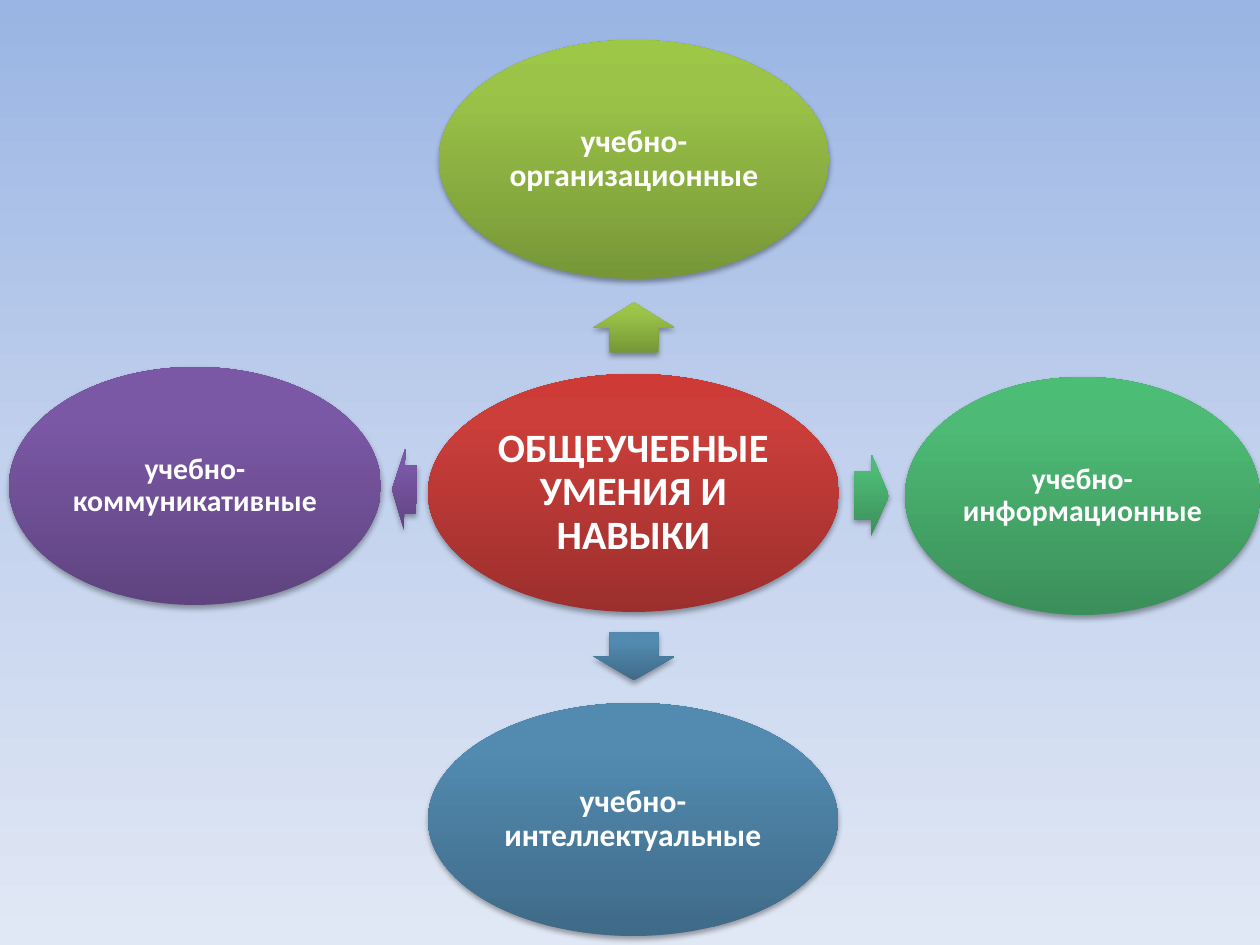
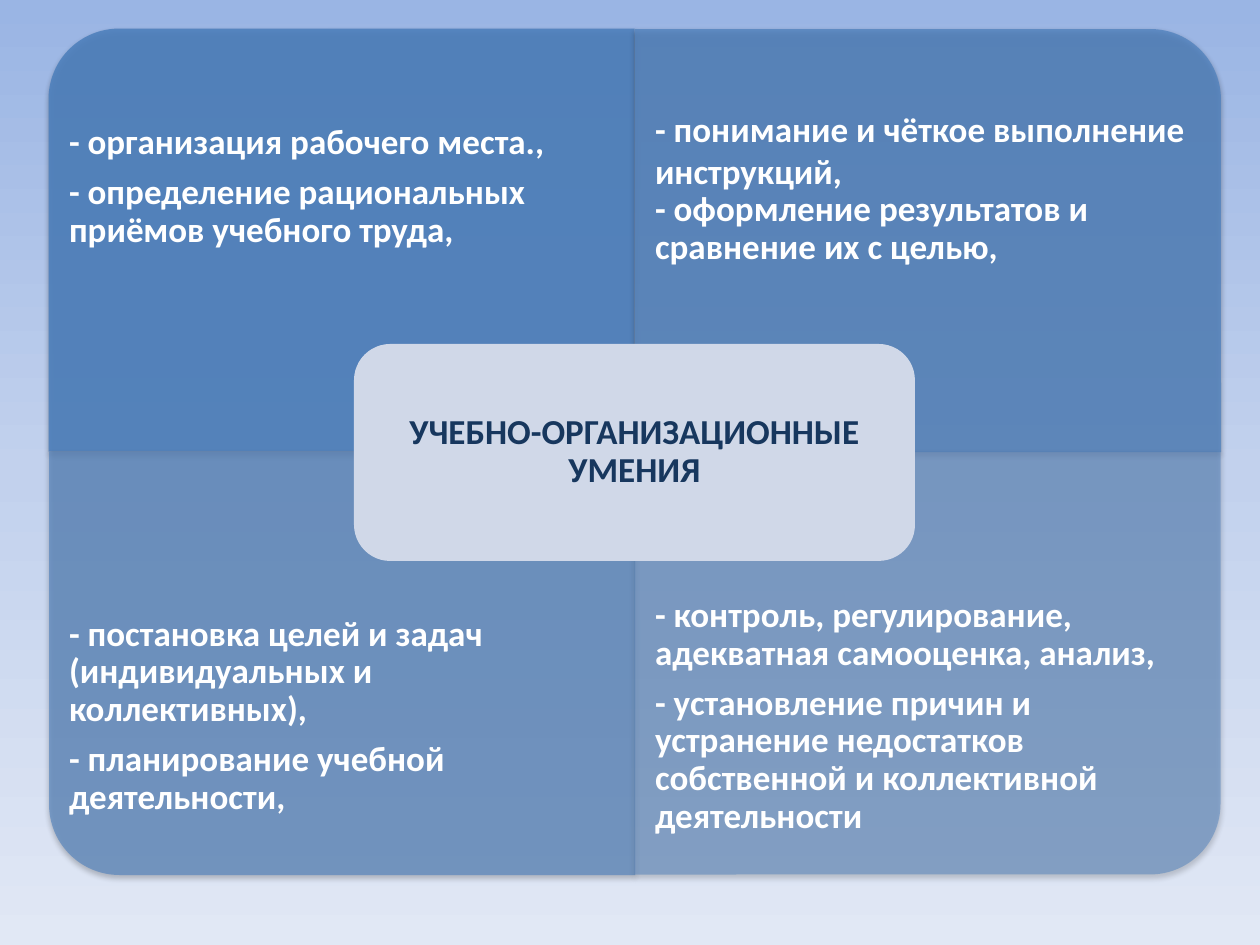
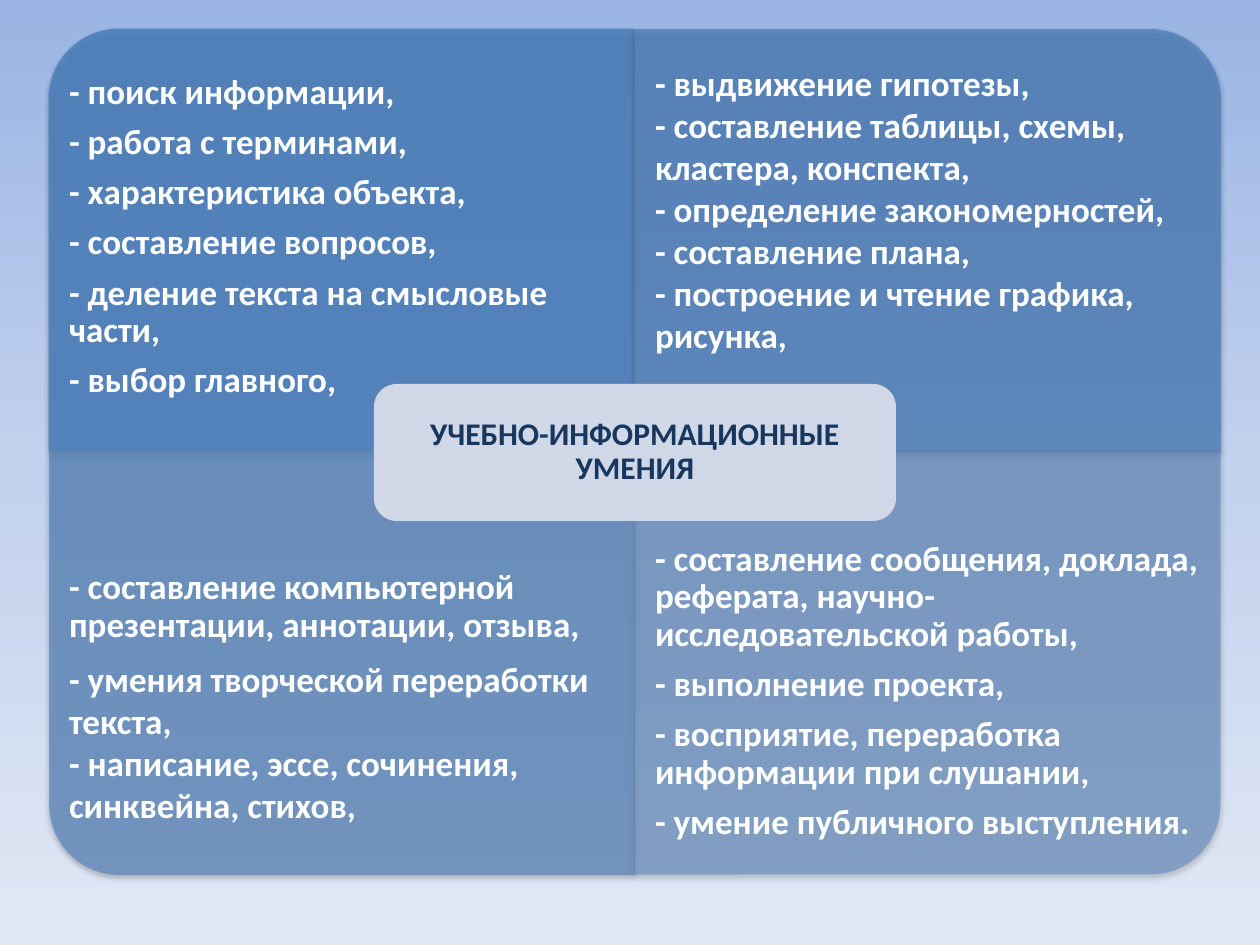
import dataclasses

import lxml.etree
import pptx
import pptx.dml.color
import pptx.enum.shapes
import pptx.enum.text
import pptx.oxml.ns
import pptx.util

PIXEL = 914400 / 126
FONT = "Calibri"
WHITE = "FFFFFF"
NAVY = "17375E"
PANEL_BLUE = "4F81BD"
CARD_BLUE = "D0D8E8"
SKY = ((0, "9AB5E4"), (50, "C2D1ED"), (100, "E1E8F5"))
RED = ((0, "9C2F2D"), (80, "CB3E3A"), (100, "CE3B37"))
LIME = ((0, "779737"), (80, "9BC348"), (100, "9DC746"))
GREEN = ((0, "3B8F5A"), (80, "4DBA75"), (100, "4BBD75"))
STEEL = ((0, "3F6A88"), (80, "528AB0"), (100, "518BB3"))
PURPLE = ((0, "5F4480"), (80, "7B58A6"), (100, "7C57A8"))

GRID_LEFT, GRID_TOP, PANEL_WIDTH, PANEL_HEIGHT = 49, 29, 586, 423
PANEL_TEXT_HEIGHT = 317
PANEL_STYLES = ((270, 90), (0, 77), (180, 63), (90, 50))

SHAPES = pptx.enum.shapes.MSO_SHAPE
CENTER = pptx.enum.text.PP_ALIGN.CENTER
LEFT = pptx.enum.text.PP_ALIGN.LEFT


@dataclasses.dataclass
class Panel:
    """Text of one quarter, its loosely spaced paragraphs and its shift down."""
    paragraphs: list
    loose: tuple = ()
    shift: int = 0


def px(length):
    """Turn pixels into EMU."""
    return pptx.util.Emu(round(length * PIXEL))


def box_of(left, top, width, height):
    """Turn a pixel box into EMU lengths."""
    return [px(length) for length in (left, top, width, height)]


def color_of(value):
    """Make a colour from a hex string."""
    return pptx.dml.color.RGBColor.from_string(value)


def add_element(parent, tag, **attributes):
    """Append a drawing element with attributes to a parent."""
    element = lxml.etree.SubElement(parent, pptx.oxml.ns.qn(tag))
    for name, value in attributes.items():
        element.set(name, str(value))
    return element


def fill_gradient(owner_fill, owner_element, stops, angle):
    """Fill with a linear gradient that stays upright on rotated shapes."""
    owner_fill.gradient()
    owner_fill.gradient_angle = angle
    gradient = next(owner_element.iter(pptx.oxml.ns.qn("a:gradFill")))
    gradient.set("rotWithShape", "0")
    stop_list = gradient.find(pptx.oxml.ns.qn("a:gsLst"))
    for stop in list(stop_list):
        stop_list.remove(stop)
    for position, value in stops:
        stop = add_element(stop_list, "a:gs", pos=position * 1000)
        add_element(stop, "a:srgbClr", val=value)


def add_shadow(shape):
    """Give a shape the soft shadow below it."""
    effects = shape.element.spPr.find(pptx.oxml.ns.qn("a:effectLst"))
    shadow = add_element(effects, "a:outerShdw", blurRad=40000, dist=23000,
                         dir=5400000, rotWithShape=0)
    color = add_element(shadow, "a:srgbClr", val="000000")
    add_element(color, "a:alpha", val=35000)


def add_plain_shape(slide, kind, box, rotation=0):
    """Add a preset shape with no line and no shadow."""
    shape = slide.shapes.add_shape(kind, *box_of(*box))
    shape.rotation = rotation
    shape.shadow.inherit = False
    shape.line.fill.background()
    return shape


def write_text(shape, paragraphs, size, color=WHITE, align=CENTER, inset=4, loose=()):
    """Write bold paragraphs, tightly spaced except the loose ones."""
    frame = shape.text_frame
    frame.word_wrap = True
    frame.vertical_anchor = pptx.enum.text.MSO_ANCHOR.MIDDLE
    frame.margin_left = frame.margin_right = px(inset)
    frame.margin_top = frame.margin_bottom = px(inset)
    for index, text in enumerate(paragraphs):
        paragraph = frame.add_paragraph() if index else frame.paragraphs[0]
        paragraph.alignment = align
        if index not in loose:
            paragraph.line_spacing = 0.9
            paragraph.space_after = pptx.util.Pt(size * 0.35)
        run = paragraph.add_run()
        run.text = text
        run.font.name = FONT
        run.font.size = pptx.util.Pt(size)
        run.font.bold = True
        run.font.color.rgb = color_of(color)


def add_ellipse(slide, box, stops, text, size):
    """Add a shaded ellipse with a label."""
    ellipse = add_plain_shape(slide, SHAPES.OVAL, box)
    fill_gradient(ellipse.fill, ellipse.element, stops, 90)
    add_shadow(ellipse)
    write_text(ellipse, [text], size)


def add_arrow(slide, box, stops, rotation):
    """Add a shaded block arrow pointing along its rotation."""
    arrow = add_plain_shape(slide, SHAPES.RIGHT_ARROW, box, rotation)
    arrow.adjustments[0] = 0.6
    arrow.adjustments[1] = 0.5
    fill_gradient(arrow.fill, arrow.element, stops, 90)
    add_shadow(arrow)


def add_panel(slide, index, panel):
    """Add one quarter of the grid with its text at the outer edge."""
    row, column = divmod(index, 2)
    rotation, opacity = PANEL_STYLES[index]
    left = GRID_LEFT + column * PANEL_WIDTH
    top = GRID_TOP + row * PANEL_HEIGHT
    width, height = PANEL_WIDTH, PANEL_HEIGHT
    if rotation % 180:
        width, height = height, width
    box = (left + (PANEL_WIDTH - width) // 2, top + (PANEL_HEIGHT - height) // 2,
           width, height)
    shape = add_plain_shape(slide, SHAPES.ROUND_1_RECTANGLE, box, rotation)
    shape.fill.solid()
    shape.fill.fore_color.rgb = color_of(PANEL_BLUE)
    color = next(shape.element.spPr.iter(pptx.oxml.ns.qn("a:srgbClr")))
    add_element(color, "a:alpha", val=opacity * 1000)
    add_shadow(shape)

    text_top = top + row * (PANEL_HEIGHT - PANEL_TEXT_HEIGHT) + panel.shift
    text_box = slide.shapes.add_textbox(
        *box_of(left, text_top, PANEL_WIDTH, PANEL_TEXT_HEIGHT))
    write_text(text_box, panel.paragraphs, 20, align=LEFT, inset=20, loose=panel.loose)


def add_card(slide, box, text, size):
    """Add the pale title card over the middle of the grid."""
    card = add_plain_shape(slide, SHAPES.ROUNDED_RECTANGLE, box)
    card.fill.solid()
    card.fill.fore_color.rgb = color_of(CARD_BLUE)
    write_text(card, [text], size, color=NAVY, inset=10)


def add_slide(presentation):
    """Add a blank slide with the sky background."""
    slide = presentation.slides.add_slide(presentation.slide_layouts[6])
    fill_gradient(slide.background.fill, slide.element, SKY, 270)
    return slide


def add_skill_map(presentation):
    """Build the slide with four skill groups around the centre."""
    slide = add_slide(presentation)
    add_ellipse(slide, (428, 374, 411, 238), RED, "ОБЩЕУЧЕБНЫЕ УМЕНИЯ И НАВЫКИ", 23)
    branches = (
        ((609, 287, 50, 81), 270, (439, 40, 390, 239), LIME,
         "учебно-организационные", 18),
        ((854, 455, 35, 81), 0.4, (905, 377, 355, 238), GREEN,
         "учебно-информационные", 17),
        ((610, 616, 48, 81), 90.3, (428, 703, 410, 233), STEEL,
         "учебно-интеллектуальные", 18),
        ((392, 449, 25, 81), 181, (9, 367, 372, 238), PURPLE,
         "учебно-коммуникативные", 17),
    )
    for arrow_box, rotation, ellipse_box, stops, text, size in branches:
        add_arrow(slide, arrow_box, stops, rotation)
        add_ellipse(slide, ellipse_box, stops, text, size)


def add_skill_grid(presentation, panels, card_box, title, size):
    """Build a slide with four panels around a title card."""
    slide = add_slide(presentation)
    for index, panel in enumerate(panels):
        add_panel(slide, index, panel)
    add_card(slide, card_box, title, size)


def main():
    """Build and save the presentation."""
    presentation = pptx.Presentation()
    presentation.slide_width = px(1260)
    presentation.slide_height = px(945)
    add_skill_map(presentation)

    organizing = (
        Panel(["- организация рабочего места.,",
               "- определение рациональных приёмов учебного труда,"]),
        Panel(["- понимание и чёткое выполнение инструкций,",
               "- оформление результатов и сравнение их с целью,"], loose=(0,)),
        Panel(["- постановка целей и задач (индивидуальных и коллективных),",
               "- планирование учебной деятельности,"]),
        Panel(["- контроль, регулирование, адекватная самооценка, анализ,",
               "- установление причин и устранение недостатков собственной "
               "и коллективной деятельности"]),
    )
    add_skill_grid(presentation, organizing, (354, 344, 561, 217),
                   "УЧЕБНО-ОРГАНИЗАЦИОННЫЕ УМЕНИЯ", 20)

    informational = (
        Panel(["- поиск информации,",
               "- работа с терминами,",
               "- характеристика объекта,",
               "- составление вопросов,",
               "- деление текста на смысловые части,",
               "- выбор главного,"], shift=50),
        Panel(["- выдвижение гипотезы,",
               "- составление таблицы, схемы, кластера, конспекта,",
               "- определение закономерностей,",
               "- составление плана,",
               "- построение и чтение графика, рисунка,"],
              loose=(0, 1, 2, 3, 4), shift=21),
        Panel(["- составление компьютерной презентации, аннотации, отзыва,",
               "- умения творческой переработки текста,",
               "- написание, эссе, сочинения, синквейна, стихов,"],
              loose=(1, 2), shift=-19),
        Panel(["- составление сообщения, доклада, реферата, "
               "научно-исследовательской работы,",
               "- выполнение проекта,",
               "- восприятие, переработка информации при слушании,",
               "- умение публичного выступления."], shift=-25),
    )
    add_skill_grid(presentation, informational, (374, 384, 522, 137),
                   "УЧЕБНО-ИНФОРМАЦИОННЫЕ УМЕНИЯ", 18)
    presentation.save("out.pptx")


if __name__ == "__main__":
    main()
